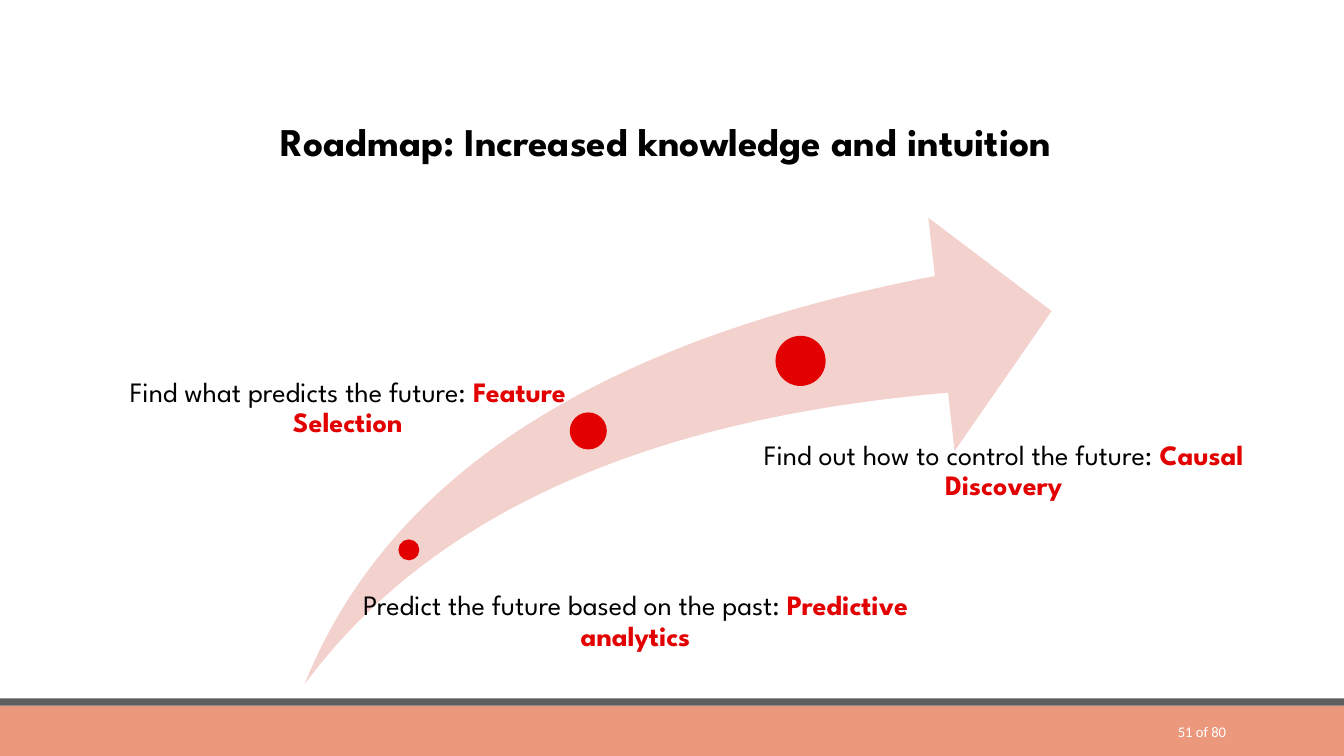
from pptx import Presentation
from pptx.dml.color import RGBColor
from pptx.enum.shapes import MSO_SHAPE
from pptx.enum.text import MSO_ANCHOR, MSO_AUTO_SIZE, PP_ALIGN
from pptx.util import Inches, Pt

RECTANGLE, ELLIPSE, SWOOSH = MSO_SHAPE.RECTANGLE, MSO_SHAPE.OVAL, MSO_SHAPE.SWOOSH_ARROW
TOP, MIDDLE = MSO_ANCHOR.TOP, MSO_ANCHOR.MIDDLE
LEFT, CENTER, RIGHT = PP_ALIGN.LEFT, PP_ALIGN.CENTER, PP_ALIGN.RIGHT
NO_AUTOFIT = MSO_AUTO_SIZE.NONE

BLACK = RGBColor(0x00, 0x00, 0x00)
WHITE = RGBColor(0xFF, 0xFF, 0xFF)
RED = RGBColor(0xE2, 0x00, 0x00)
PINK = RGBColor(0xF3, 0xD1, 0xCD)
SALMON = RGBColor(0xEC, 0x98, 0x7D)
GRAY = RGBColor(0x5E, 0x5E, 0x5E)
HEADING_FONT = "League Spartan"

prs = Presentation()
prs.slide_width, prs.slide_height = Inches(13.33), Inches(7.5)
slide = prs.slides.add_slide(prs.slide_layouts[5])


def add_filled(preset, left, top, width, height, color):
    shape = slide.shapes.add_shape(
        preset, Inches(left), Inches(top), Inches(width), Inches(height))
    shape.shadow.inherit = False
    shape.fill.solid()
    shape.fill.fore_color.rgb = color
    shape.line.fill.background()
    return shape


def add_run(paragraph, text, size, color, bold=False, font=HEADING_FONT):
    run = paragraph.add_run()
    run.text = text
    run.font.name = font
    run.font.size = Pt(size)
    run.font.bold = bold
    run.font.color.rgb = color


add_filled(RECTANGLE, 0, 7, 13.33, 0.5, SALMON)
add_filled(RECTANGLE, 0, 6.93, 13.33, 0.07, GRAY)

title = slide.shapes.title
title.left, title.top = Inches(2.68), Inches(1.11)
title.width, title.height = Inches(8.89), Inches(0.57)
title.text_frame.auto_size = NO_AUTOFIT
title.text_frame.vertical_anchor = TOP
heading = title.text_frame.paragraphs[0]
heading.alignment = LEFT
add_run(heading, "Roadmap: Increased knowledge and intuition", 28, BLACK, bold=True)

roadmap_arrow = add_filled(SWOOSH, 3.02, 2.16, 7.41, 4.63, PINK)
roadmap_arrow.adjustments[0] = 0.25
roadmap_arrow.adjustments[1] = 0.25

milestones = [
    ((3.96, 5.36, 0.19), (3.09, 5.87, 6.33, 0.92), 0.1,
     "Predict the future based on the past: ", "Predictive analytics"),
    ((5.66, 4.1, 0.35), (0.83, 3.75, 5.06, 0.87), 0.18,
     "Find what predicts the future: ", "Feature Selection"),
    ((7.7, 3.34, 0.48), (7.02, 4.38, 5.61, 0.92), 0.26,
     "Find out how to control the future: ", "Causal Discovery"),
]
for (dot_left, dot_top, diameter), label_box, inset, goal, method in milestones:
    dot = add_filled(ELLIPSE, dot_left, dot_top, diameter, diameter, RED)
    dot.line.color.rgb = RED
    dot.line.width = Pt(1.25)

    label = slide.shapes.add_textbox(*map(Inches, label_box)).text_frame
    label.word_wrap = True
    label.margin_left = Inches(inset)
    label.margin_top = label.margin_right = label.margin_bottom = 0
    sentence = label.paragraphs[0]
    sentence.alignment = CENTER
    sentence.line_spacing = 0.9
    add_run(sentence, goal, 20, BLACK)
    add_run(sentence, method, 20, RED, bold=True)

page_number = slide.shapes.add_textbox(
    Inches(10.83), Inches(7.06), Inches(1.43), Inches(0.4)).text_frame
page_number.word_wrap = True
page_number.vertical_anchor = MIDDLE
page_count = page_number.paragraphs[0]
page_count.alignment = RIGHT
add_run(page_count, "51 of 80", 10.5, WHITE, font="Calibri")

prs.save("out.pptx")
